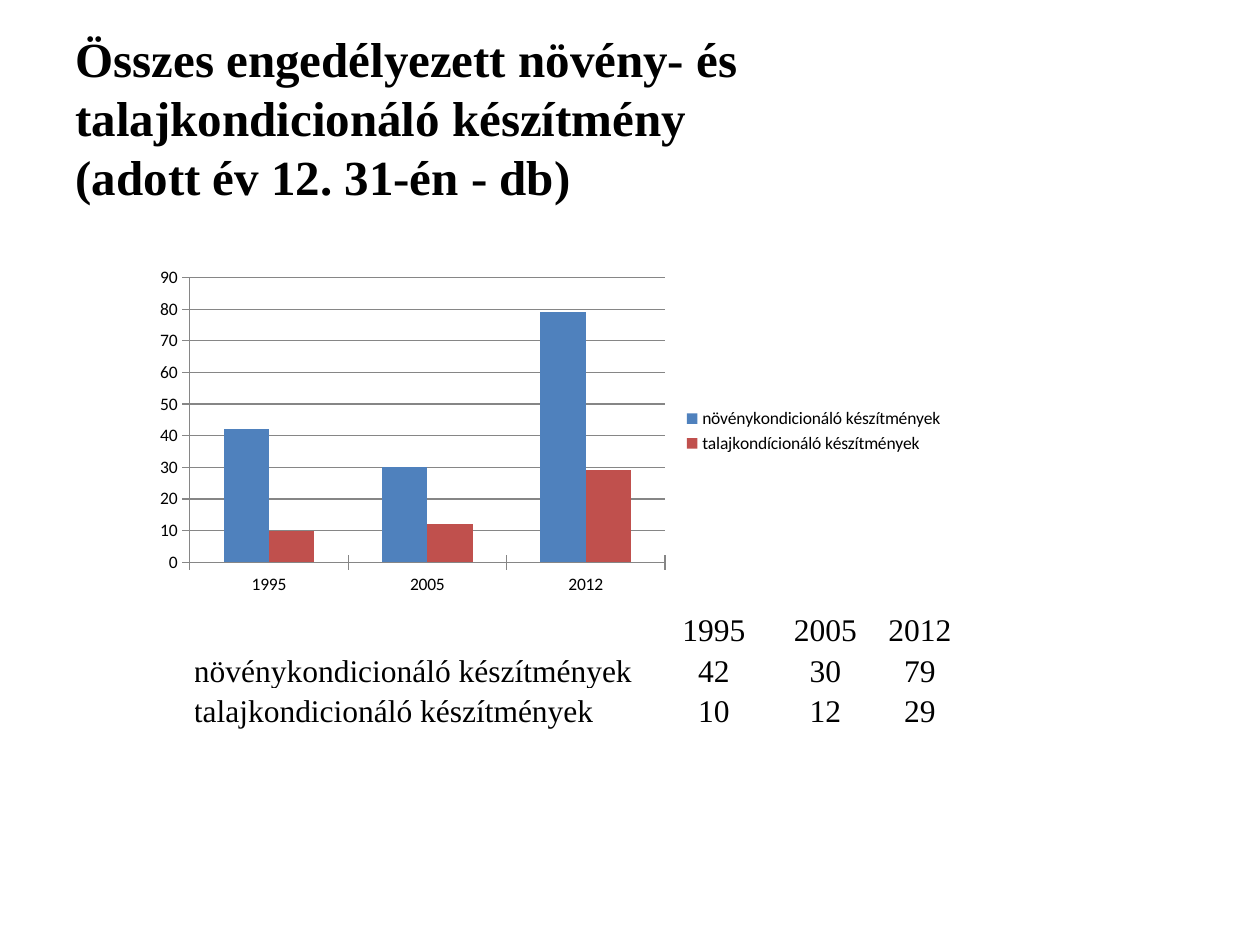
import pptx
import pptx.chart.data
import pptx.dml.color
import pptx.enum.chart
import pptx.enum.text
import pptx.util

Cm, Pt = pptx.util.Cm, pptx.util.Pt
ALIGN = pptx.enum.text.PP_ALIGN
ANCHOR = pptx.enum.text.MSO_ANCHOR


def rgb(value):
    return pptx.dml.color.RGBColor.from_string(value)


class SlideBuilder:
    text_font = "Times New Roman"
    chart_font = "Calibri"
    text_color = "000000"
    line_color = "868686"

    def __init__(self, prs):
        self.s = prs.slides.add_slide(prs.slide_layouts[5])

    def style(self, font, name, size, bold=False):
        font.name, font.size, font.bold = name, Pt(size), bold
        font.color.rgb = rgb(self.text_color)

    def title(self, text, left, top, width, height):
        sp = self.s.shapes.title
        sp.left, sp.top, sp.width, sp.height = map(Cm, (left, top, width, height))
        tf = sp.text_frame
        tf.word_wrap = True
        tf.auto_size = pptx.enum.text.MSO_AUTO_SIZE.NONE
        tf.vertical_anchor = ANCHOR.MIDDLE
        p = tf.paragraphs[0]
        p.text = text
        p.alignment = ALIGN.LEFT
        self.style(p.font, self.text_font, 28, bold=True)

    def column_chart(self, categories, series, left, top, width, height):
        """Series are (name, values, colour) tuples."""
        data = pptx.chart.data.CategoryChartData()
        data.categories = categories
        for name, values, _ in series:
            data.add_series(name, values)
        chart = self.s.shapes.add_chart(
            pptx.enum.chart.XL_CHART_TYPE.COLUMN_CLUSTERED,
            *map(Cm, (left, top, width, height)), data).chart
        self.style(chart.font, self.chart_font, 10)
        chart.has_title = False
        chart.has_legend = True
        chart.legend.position = pptx.enum.chart.XL_LEGEND_POSITION.RIGHT
        chart.legend.include_in_layout = False

        plot = chart.plots[0]
        plot.vary_by_categories = False
        plot.gap_width, plot.overlap = 150, 0
        for ser, (_, _, color) in zip(plot.series, series):
            ser.format.fill.solid()
            ser.format.fill.fore_color.rgb = rgb(color)

        values_axis = chart.value_axis
        values_axis.minimum_scale, values_axis.maximum_scale = 0, 90
        values_axis.major_unit = 10
        values_axis.has_major_gridlines = True
        for axis in (chart.category_axis, values_axis):
            axis.major_tick_mark = pptx.enum.chart.XL_TICK_MARK.CROSS
        for item in (chart.category_axis, values_axis, values_axis.major_gridlines):
            item.format.line.color.rgb = rgb(self.line_color)
            item.format.line.width = Pt(0.75)

    def table(self, rows, widths, heights, left, top):
        table = self.s.shapes.add_table(
            len(rows), len(widths), Cm(left), Cm(top),
            Cm(sum(widths)), Cm(sum(heights))).table
        table.first_row = table.horz_banding = False
        for column, width in zip(table.columns, widths):
            column.width = Cm(width)
        for row, height, texts in zip(table.rows, heights, rows):
            row.height = Cm(height)
            for i, (cell, text) in enumerate(zip(row.cells, texts)):
                cell.fill.background()
                cell.margin_left = cell.margin_right = 0
                cell.margin_top = cell.margin_bottom = 0
                cell.vertical_anchor = ANCHOR.BOTTOM
                p = cell.text_frame.paragraphs[0]
                p.text = str(text)
                p.alignment = ALIGN.CENTER if i else ALIGN.LEFT
                self.style(p.font, self.text_font, 18)


def main():
    prs = pptx.Presentation()
    prs.slide_width, prs.slide_height = Cm(25.4), Cm(19.05)
    years = ["1995", "2005", "2012"]
    plant = [42, 30, 79]
    soil = [10, 12, 29]

    slide = SlideBuilder(prs)
    slide.title("Összes engedélyezett növény- és \vtalajkondicionáló készítmény "
                "\v(adott év 12. 31-én - db)", 1.27, 0.76, 22.86, 3.18)
    slide.column_chart(
        years,
        [("növénykondicionáló készítmények", plant, "4F81BD"),
         ("talajkondícionáló készítmények", soil, "C0504D")],
        2.9, 5.26, 16.38, 6.86)
    slide.table(
        [["", *years],
         ["növénykondicionáló készítmények", *plant],
         ["talajkondicionáló készítmények", *soil]],
        widths=[9.17, 2.62, 1.88, 1.93], heights=[0.75, 0.82, 0.82],
        left=3.91, top=12.32)
    prs.save("out.pptx")


if __name__ == "__main__":
    main()
